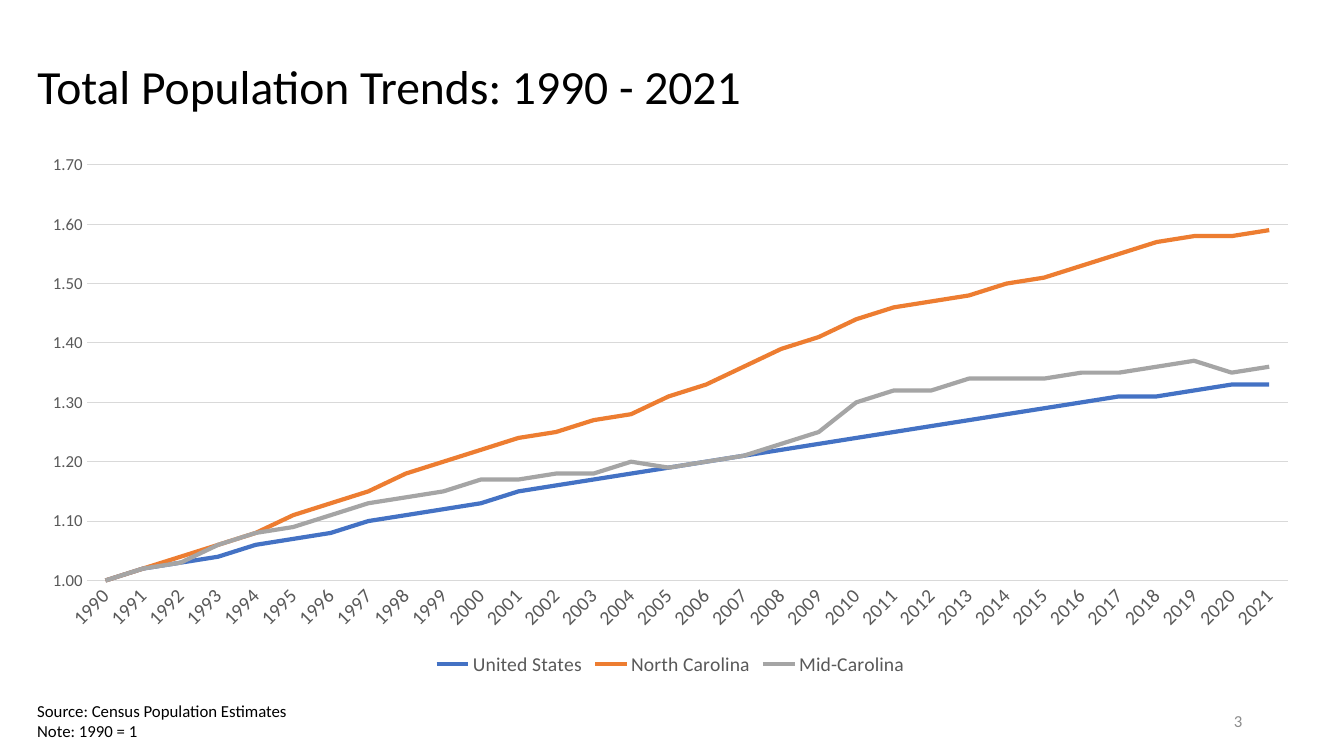
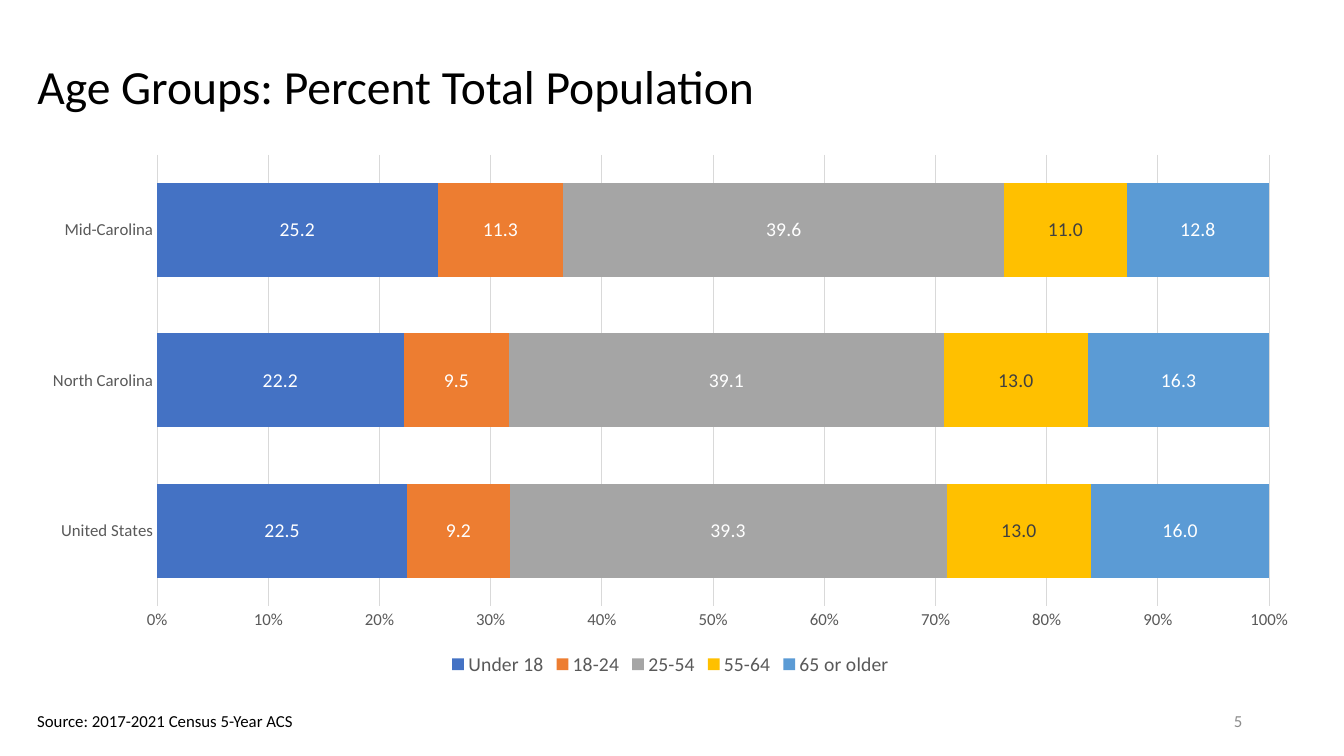
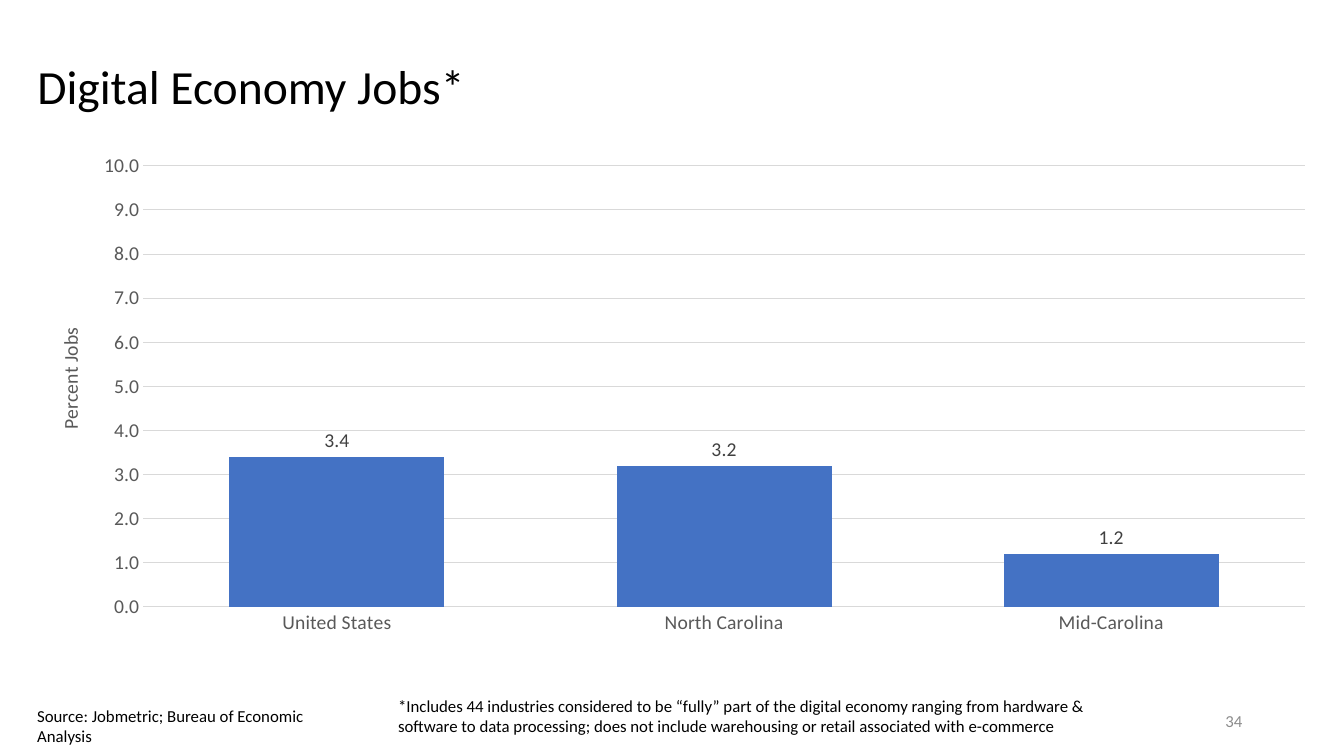
from dataclasses import dataclass

from lxml import etree
from pptx import Presentation
from pptx.chart.data import CategoryChartData
from pptx.dml.color import RGBColor
from pptx.enum.chart import XL_CHART_TYPE, XL_LABEL_POSITION, XL_LEGEND_POSITION, XL_TICK_MARK
from pptx.enum.text import MSO_ANCHOR, MSO_AUTO_SIZE, PP_ALIGN
from pptx.oxml.ns import qn
from pptx.util import Inches, Pt


@dataclass(frozen=True)
class Theme:
    font: str = "Calibri"
    black: str = "000000"
    dark: str = "404040"
    axis: str = "595959"
    number: str = "8C8C8C"
    grid: str = "D9D9D9"
    white: str = "FFFFFF"
    yellow: str = "FFC000"
    series: tuple = ("4472C4", "ED7D31", "A5A5A5", yellow, "5B9BD5")
    title_size: int = 34
    label_size: int = 14
    small_size: int = 12


theme = Theme()


def style_font(font, size, color):
    font.name = theme.font
    font.size = Pt(size)
    font.bold = False
    font.color.rgb = RGBColor.from_string(color)


def set_layout(parent, position, **fractions):
    """Place a chart part by fractions of the chart area."""
    for old_layout in parent.findall(qn("c:layout")):
        parent.remove(old_layout)
    layout = etree.Element(qn("c:layout"))
    manual = etree.SubElement(layout, qn("c:manualLayout"))
    for tag, value in fractions.items():
        etree.SubElement(manual, qn(f"c:{tag}")).set("val", str(value))
    parent.insert(position, layout)


deck = Presentation()
deck.slide_width, deck.slide_height = Inches(13.33), Inches(7.5)
title_only = deck.slide_layouts[5]
layout_title = title_only.placeholders[0]
layout_title.left, layout_title.top = Inches(0.27), Inches(0.34)
layout_title.width, layout_title.height = Inches(12.76), Inches(1.09)

regions = ["United States", "North Carolina", "Mid-Carolina"]
population = [
    [1, 1.02, 1.03, 1.04, 1.06, 1.07, 1.08, 1.1, 1.11, 1.12, 1.13, 1.15, 1.16, 1.17, 1.18, 1.19,
     1.2, 1.21, 1.22, 1.23, 1.24, 1.25, 1.26, 1.27, 1.28, 1.29, 1.3, 1.31, 1.31, 1.32, 1.33, 1.33],
    [1, 1.02, 1.04, 1.06, 1.08, 1.11, 1.13, 1.15, 1.18, 1.2, 1.22, 1.24, 1.25, 1.27, 1.28, 1.31,
     1.33, 1.36, 1.39, 1.41, 1.44, 1.46, 1.47, 1.48, 1.5, 1.51, 1.53, 1.55, 1.57, 1.58, 1.58, 1.59],
    [1, 1.02, 1.03, 1.06, 1.08, 1.09, 1.11, 1.13, 1.14, 1.15, 1.17, 1.17, 1.18, 1.18, 1.2, 1.19,
     1.2, 1.21, 1.23, 1.25, 1.3, 1.32, 1.32, 1.34, 1.34, 1.34, 1.35, 1.35, 1.36, 1.37, 1.35, 1.36],
]
age_groups = {
    "Under 18": [22.5, 22.2, 25.2],
    "18-24": [9.2, 9.5, 11.3],
    "25-54": [39.3, 39.1, 39.6],
    "55-64": [13, 13, 11],
    "65 or older": [16, 16.3, 12.8],
}

# Notes are (text, left, top, width, height, wrap).
pages = [
    dict(
        title="Total Population Trends: 1990 - 2021", number="3",
        kind=XL_CHART_TYPE.LINE, size=(12.76, 5.32),
        categories=[str(year) for year in range(1990, 2022)],
        series=dict(zip(regions, population)),
        axis_sizes=(theme.label_size, theme.small_size), axis_format="0.00",
        scale=(1, 1.7, 0.1),
        notes=[("Source: Census Population Estimates\nNote: 1990 = 1",
                0.27, 6.9, 2.71, 0.5, False)],
    ),
    dict(
        title="Age Groups: Percent Total Population", number="5",
        kind=XL_CHART_TYPE.BAR_STACKED_100, size=(12.76, 5.32),
        categories=regions, series=age_groups,
        axis_sizes=(theme.small_size, theme.small_size), axis_format="0%",
        scale=(0, 1, 0.1), gap=60,
        label_format="#,##0.0", label_place=XL_LABEL_POSITION.CENTER,
        notes=[("Source: 2017-2021 Census 5-Year ACS", 0.27, 7, 2.78, 0.3, False)],
    ),
    dict(
        title="Digital Economy Jobs*", number="34",
        kind=XL_CHART_TYPE.COLUMN_CLUSTERED, size=(12.8, 5.4),
        categories=regions, series={"Series 1": [3.4, 3.2, 1.2]},
        axis_sizes=(theme.label_size, theme.label_size), axis_format="0.0",
        scale=(0, 10, 1), gap=80,
        label_format="0.0", label_place=XL_LABEL_POSITION.OUTSIDE_END,
        notes=[
            ("Source: Jobmetric; Bureau of Economic Analysis", 0.27, 6.95, 3.37, 0.3, True),
            ("*Includes 44 industries considered to be “fully” part of the digital economy "
             "ranging from hardware & software to data processing; does not include "
             "warehousing or retail associated with e-commerce", 3.85, 6.85, 7.07, 0.5, True),
        ],
    ),
]

charts = []
for content in pages:
    page = deck.slides.add_slide(title_only)
    title_frame = page.shapes.title.text_frame
    title_frame.text = content["title"]
    title_frame.vertical_anchor = MSO_ANCHOR.MIDDLE
    title_frame.auto_size = MSO_AUTO_SIZE.NONE
    heading = title_frame.paragraphs[0]
    heading.alignment = PP_ALIGN.LEFT
    heading.line_spacing = 0.9
    style_font(heading.runs[0].font, theme.title_size, theme.black)

    chart_data = CategoryChartData()
    chart_data.categories = content["categories"]
    for name, values in content["series"].items():
        chart_data.add_series(name, values)
    width, height = content["size"]
    chart = page.shapes.add_chart(content["kind"], Inches(0.27), Inches(1.43),
                                  Inches(width), Inches(height), chart_data).chart
    charts.append(chart)
    style_font(chart.font, theme.label_size, theme.axis)
    chart.has_title = False
    chart.has_legend = len(content["series"]) > 1
    if chart.has_legend:
        chart.legend.position = XL_LEGEND_POSITION.BOTTOM
        chart.legend.include_in_layout = False
        style_font(chart.legend.font, theme.label_size, theme.axis)

    for axis, size in zip((chart.category_axis, chart.value_axis), content["axis_sizes"]):
        axis.major_tick_mark = axis.minor_tick_mark = XL_TICK_MARK.NONE
        style_font(axis.tick_labels.font, size, theme.axis)
    value_axis = chart.value_axis
    value_axis.minimum_scale, value_axis.maximum_scale, value_axis.major_unit = content["scale"]
    value_axis.tick_labels.number_format = content["axis_format"]
    value_axis.tick_labels.number_format_is_linked = False
    value_axis.format.line.fill.background()
    value_axis.has_major_gridlines = True
    for line in (chart.category_axis.format.line, value_axis.major_gridlines.format.line):
        line.color.rgb = RGBColor.from_string(theme.grid)
        line.width = Pt(0.75)

    plot = chart.plots[0]
    plot.vary_by_categories = False
    if "gap" in content:
        plot.gap_width = content["gap"]
    for series, color in zip(plot.series, theme.series):
        if content["kind"] == XL_CHART_TYPE.LINE:
            series.smooth = False
            series.format.line.color.rgb = RGBColor.from_string(color)
            series.format.line.width = Pt(3)
            continue
        series.format.fill.solid()
        series.format.fill.fore_color.rgb = RGBColor.from_string(color)
        labels = series.data_labels
        labels.show_value = True
        labels.number_format = content["label_format"]
        labels.number_format_is_linked = False
        labels.position = content["label_place"]
        on_dark = chart.has_legend and color != theme.yellow
        style_font(labels.font, theme.label_size, theme.white if on_dark else theme.dark)

    number_box = page.shapes.add_textbox(Inches(9.42), Inches(6.95), Inches(3), Inches(0.4))
    number_box.text_frame.text = content["number"]
    number_box.text_frame.word_wrap = True
    number_box.text_frame.vertical_anchor = MSO_ANCHOR.MIDDLE
    number_para = number_box.text_frame.paragraphs[0]
    number_para.alignment = PP_ALIGN.RIGHT
    style_font(number_para.runs[0].font, theme.small_size, theme.number)

    for text, *place, wrap in content["notes"]:
        note_frame = page.shapes.add_textbox(*map(Inches, place)).text_frame
        note_frame.text = text
        note_frame.word_wrap = wrap
        note_frame.auto_size = MSO_AUTO_SIZE.SHAPE_TO_FIT_TEXT
        for para in note_frame.paragraphs:
            style_font(para.runs[0].font, theme.small_size, theme.black)

trend_chart, age_chart, jobs_chart = charts

# Slant the year labels by 45 degrees.
year_labels = trend_chart.category_axis._element.find(qn("c:txPr"))
year_labels.find(qn("a:bodyPr")).set("rot", "-2700000")

age_chart.plots[0].overlap = 100

axis_title = jobs_chart.value_axis.axis_title
axis_title.text_frame.text = "Percent Jobs"
style_font(axis_title.text_frame.paragraphs[0].runs[0].font, theme.label_size, theme.axis)
axis_title.text_frame._txBody.find(qn("a:bodyPr")).set("rot", "-5400000")
set_layout(axis_title._element, 1, xMode="edge", yMode="edge", x=0.02, y=0.33)
plot_area = jobs_chart._chartSpace.chart.plotArea
set_layout(plot_area, 0, layoutTarget="inner", xMode="edge", yMode="edge",
           x=0.09, y=0.04, w=0.9, h=0.81)

deck.save("out.pptx")
